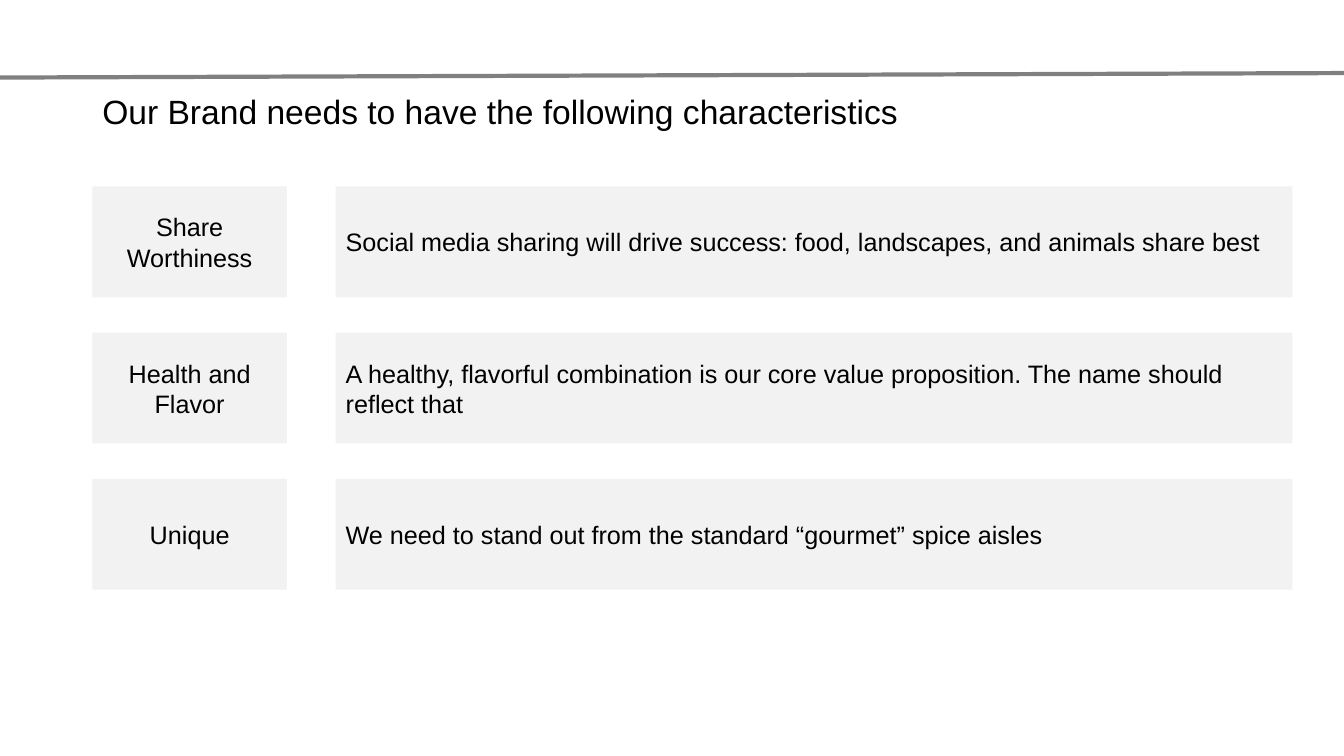
from typing import NamedTuple

from lxml import etree
from pptx import Presentation
from pptx.dml.color import RGBColor
from pptx.enum.shapes import MSO_CONNECTOR, MSO_SHAPE
from pptx.enum.text import MSO_ANCHOR, PP_ALIGN
from pptx.oxml.ns import qn
from pptx.slide import Slide
from pptx.text.text import TextFrame
from pptx.util import Pt

RECTANGLE = MSO_SHAPE.RECTANGLE
STRAIGHT = MSO_CONNECTOR.STRAIGHT
MIDDLE = MSO_ANCHOR.MIDDLE
LEFT, CENTER = PP_ALIGN.LEFT, PP_ALIGN.CENTER

BLACK = RGBColor(0x00, 0x00, 0x00)
GRAY = RGBColor(0x80, 0x80, 0x80)
PALE = RGBColor(0xF2, 0xF2, 0xF2)

FONT = "Arial"
SLIDE_W, SLIDE_H = 960, 540
MARGIN = 66
ROW_TOP, ROW_H, ROW_STEP = 133.2, 79.2, 104.4


class Column(NamedTuple):
    left: float
    width: float
    align: PP_ALIGN


class Trait(NamedTuple):
    name: str
    reason: str


NAME_COLUMN = Column(MARGIN, 139, CENTER)
REASON_COLUMN = Column(239.8, 683.3, LEFT)

TRAITS = [
    Trait("Share Worthiness",
          "Social media sharing will drive success: food, landscapes, and animals share best"),
    Trait("Health and Flavor",
          "A healthy, flavorful combination is our core value proposition. "
          "The name should reflect that"),
    Trait("Unique", "We need to stand out from the standard “gourmet” spice aisles"),
]


def write(tf: TextFrame, text: str, size: float, align: PP_ALIGN) -> None:
    tf.text = text
    tf.word_wrap = True
    tf.vertical_anchor = MIDDLE
    p = tf.paragraphs[0]
    p.alignment = align
    font = p.runs[0].font
    font.name = FONT
    font.size = Pt(size)
    font.color.rgb = BLACK


def add_rule(s: Slide) -> None:
    rule = s.shapes.add_connector(STRAIGHT, Pt(0), Pt(55.4), Pt(SLIDE_W), Pt(52.2))
    rule.line.color.rgb = GRAY
    rule.line.width = Pt(3)
    etree.SubElement(rule._element.spPr, qn("a:effectLst"))


def add_title(s: Slide, text: str) -> None:
    box = s.shapes.add_textbox(Pt(MARGIN), Pt(28.75), Pt(SLIDE_W - 2 * MARGIN), Pt(104.4))
    write(box.text_frame, text, 24, LEFT)
    box.text_frame.paragraphs[0].line_spacing = 0.9


def add_panel(s: Slide, column: Column, top: float, text: str) -> None:
    sp = s.shapes.add_shape(RECTANGLE, Pt(column.left), Pt(top), Pt(column.width), Pt(ROW_H))
    sp.shadow.inherit = False
    sp.fill.solid()
    sp.fill.fore_color.rgb = PALE
    sp.line.fill.background()
    write(sp.text_frame, text, 18, column.align)


def main() -> None:
    prs = Presentation()
    prs.slide_width, prs.slide_height = Pt(SLIDE_W), Pt(SLIDE_H)
    s = prs.slides.add_slide(prs.slide_layouts[6])
    add_rule(s)
    add_title(s, "Our Brand needs to have the following characteristics")
    for row, trait in enumerate(TRAITS):
        top = ROW_TOP + row * ROW_STEP
        add_panel(s, NAME_COLUMN, top, trait.name)
        add_panel(s, REASON_COLUMN, top, trait.reason)
    prs.save("out.pptx")


if __name__ == "__main__":
    main()
